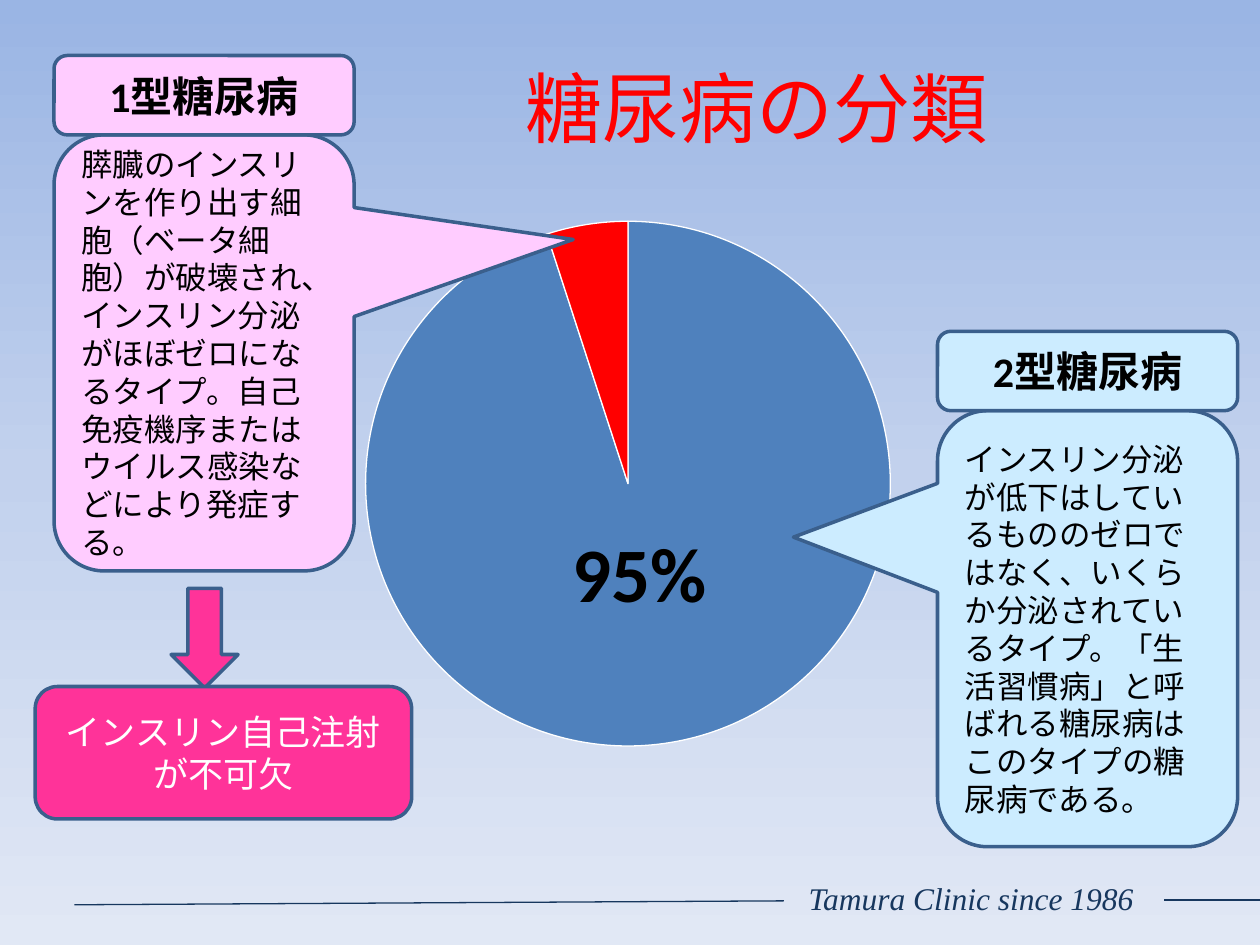
from copy import deepcopy
from dataclasses import dataclass

from lxml import etree
from pptx import Presentation
from pptx.chart.data import CategoryChartData
from pptx.dml.color import RGBColor
from pptx.enum.chart import XL_CHART_TYPE
from pptx.enum.shapes import MSO_CONNECTOR, MSO_SHAPE
from pptx.enum.text import MSO_ANCHOR, PP_ALIGN
from pptx.oxml.ns import qn
from pptx.util import Cm, Pt

PIE = XL_CHART_TYPE.PIE
STRAIGHT = MSO_CONNECTOR.STRAIGHT
ROUNDED = MSO_SHAPE.ROUNDED_RECTANGLE
CALLOUT = MSO_SHAPE.ROUNDED_RECTANGULAR_CALLOUT
DOWN_ARROW = MSO_SHAPE.DOWN_ARROW
TOP, MIDDLE = MSO_ANCHOR.TOP, MSO_ANCHOR.MIDDLE
LEFT, CENTER = PP_ALIGN.LEFT, PP_ALIGN.CENTER

BLACK = RGBColor(0x00, 0x00, 0x00)
WHITE = RGBColor(0xFF, 0xFF, 0xFF)
RED = RGBColor(0xFF, 0x00, 0x00)
PINK = RGBColor(0xFF, 0xCC, 0xFF)
HOT_PINK = RGBColor(0xFF, 0x33, 0x99)
PALE_BLUE = RGBColor(0xCC, 0xEC, 0xFF)
OUTLINE = RGBColor(0x3A, 0x5F, 0x8C)
NAVY = RGBColor(0x17, 0x37, 0x5E)
SLICE_COLORS = (RGBColor(0x4F, 0x81, 0xBD), RED,
                RGBColor(0x9B, 0xBB, 0x59), RGBColor(0x80, 0x64, 0xA2))
SKY = ((0, RGBColor(0x9A, 0xB5, 0xE4)),
       (0.5, RGBColor(0xC2, 0xD1, 0xED)),
       (1, RGBColor(0xE1, 0xE8, 0xF5)))

CARD_WIDTH, HEADER_HEIGHT, BODY_HEIGHT = 6.05, 1.6, 8.79


@dataclass(frozen=True)
class Box:
    """Position and size in centimetres."""
    left: float
    top: float
    width: float
    height: float

    def lengths(self):
        return Cm(self.left), Cm(self.top), Cm(self.width), Cm(self.height)


@dataclass(frozen=True)
class TextStyle:
    size: int
    color: RGBColor = BLACK
    align: PP_ALIGN = LEFT
    bold: bool = False
    italic: bool = False
    font: str = "Calibri"


@dataclass(frozen=True)
class TypeCard:
    """A heading with a callout below it that points at a pie slice."""
    left: float
    top: float
    fill: RGBColor
    heading: str
    body: str
    pointer: tuple[float, float]


CARDS = (
    TypeCard(1.09, 1.12, PINK, "1型糖尿病",
             "膵臓のインスリンを作り出す細胞（ベータ細胞）が破壊され、"
             "インスリン分泌がほぼゼロになるタイプ。"
             "自己免疫機序またはウイルス感染などにより発症する。",
             (1.23, -0.26)),
    TypeCard(18.9, 6.68, PALE_BLUE, "2型糖尿病",
             "インスリン分泌が低下はしているもののゼロではなく、"
             "いくらか分泌されているタイプ。"
             "「生活習慣病」と呼ばれる糖尿病はこのタイプの糖尿病である。",
             (-0.98, -0.21)),
)
HEADING = TextStyle(24, align=CENTER, bold=True)
BODY = TextStyle(18)


def write_text(shape, text: str, style: TextStyle, anchor: MSO_ANCHOR) -> None:
    frame = shape.text_frame
    frame.word_wrap = True
    frame.vertical_anchor = anchor
    paragraph = frame.paragraphs[0]
    paragraph.text = text
    paragraph.alignment = style.align
    font = paragraph.font
    font.name, font.size, font.color.rgb = style.font, Pt(style.size), style.color
    font.bold, font.italic = style.bold, style.italic


def add_label(slide, box: Box, text: str, style: TextStyle, anchor=TOP) -> None:
    write_text(slide.shapes.add_textbox(*box.lengths()), text, style, anchor)


def add_outlined(slide, kind: MSO_SHAPE, box: Box, fill: RGBColor):
    shape = slide.shapes.add_shape(kind, *box.lengths())
    shape.shadow.inherit = False
    shape.fill.solid()
    shape.fill.fore_color.rgb = fill
    shape.line.color.rgb = OUTLINE
    shape.line.width = Pt(2)
    return shape


def add_card(slide, card: TypeCard) -> None:
    body_box = Box(card.left, card.top + HEADER_HEIGHT, CARD_WIDTH, BODY_HEIGHT)
    body = add_outlined(slide, CALLOUT, body_box, card.fill)
    body.adjustments[0], body.adjustments[1] = card.pointer
    write_text(body, card.body, BODY, MIDDLE)
    header_box = Box(card.left, card.top, CARD_WIDTH, HEADER_HEIGHT)
    header = add_outlined(slide, ROUNDED, header_box, card.fill)
    write_text(header, card.heading, HEADING, MIDDLE)


def add_rule(slide, x1: float, y1: float, x2: float, y2: float) -> None:
    rule = slide.shapes.add_connector(STRAIGHT, Cm(x1), Cm(y1), Cm(x2), Cm(y2))
    rule.line.color.rgb = NAVY
    rule.line.width = Pt(0.75)
    etree.SubElement(rule._element.spPr, qn("a:effectLst"))


def add_pie(slide, box: Box) -> None:
    data = CategoryChartData()
    data.categories = ["1", "2", "3", "4"]
    data.add_series("Series 1", (95, 5, None, None))
    chart = slide.shapes.add_chart(PIE, *box.lengths(), data).chart
    chart.has_legend = False
    chart.has_title = False
    chart.font.name, chart.font.size = "Calibri", Pt(18)
    chart.font.color.rgb = BLACK
    plot = chart.plots[0]
    plot.vary_by_categories = True
    for index, color in enumerate(SLICE_COLORS):
        slice_format = plot.series[0].points[index].format
        slice_format.fill.solid()
        slice_format.fill.fore_color.rgb = color
        slice_format.line.color.rgb = WHITE
        slice_format.line.width = Pt(0.75)


def paint_background(slide) -> None:
    fill = slide.background.fill
    fill.gradient()
    fill.gradient_angle = 270
    stop_list = slide._element.find(".//" + qn("a:gsLst"))
    stop_list.append(deepcopy(stop_list[-1]))
    for stop, (position, color) in zip(fill.gradient_stops, SKY):
        stop.position = position
        stop.color.rgb = color


def main() -> None:
    presentation = Presentation()
    presentation.slide_width, presentation.slide_height = Cm(25.4), Cm(19.05)
    slide = presentation.slides.add_slide(presentation.slide_layouts[6])
    paint_background(slide)

    add_label(slide, Box(7.06, 1.04, 16.41, 2.21), "糖尿病の分類",
              TextStyle(44, RED, CENTER), MIDDLE)
    add_pie(slide, Box(4.19, 4.11, 16.94, 11.28))
    for card in CARDS:
        add_card(slide, card)

    add_outlined(slide, DOWN_ARROW, Box(3.45, 11.86, 1.35, 2.01), HOT_PINK)
    treatment = add_outlined(slide, ROUNDED, Box(0.71, 13.84, 7.59, 2.67), HOT_PINK)
    write_text(treatment, "インスリン自己注射が不可欠", TextStyle(20, WHITE, CENTER), MIDDLE)
    add_label(slide, Box(11.3, 10.46, 4.01, 2.13), "95%", TextStyle(44, bold=True))

    add_rule(slide, 1.5, 18.24, 15.8, 18.16)
    add_rule(slide, 23.47, 18.14, 25.4, 18.14)
    add_label(slide, Box(16.05, 17.6, 7.42, 1.02), "Tamura Clinic since 1986",
              TextStyle(18, NAVY, italic=True, font="Times New Roman"))
    presentation.save("out.pptx")


if __name__ == "__main__":
    main()
